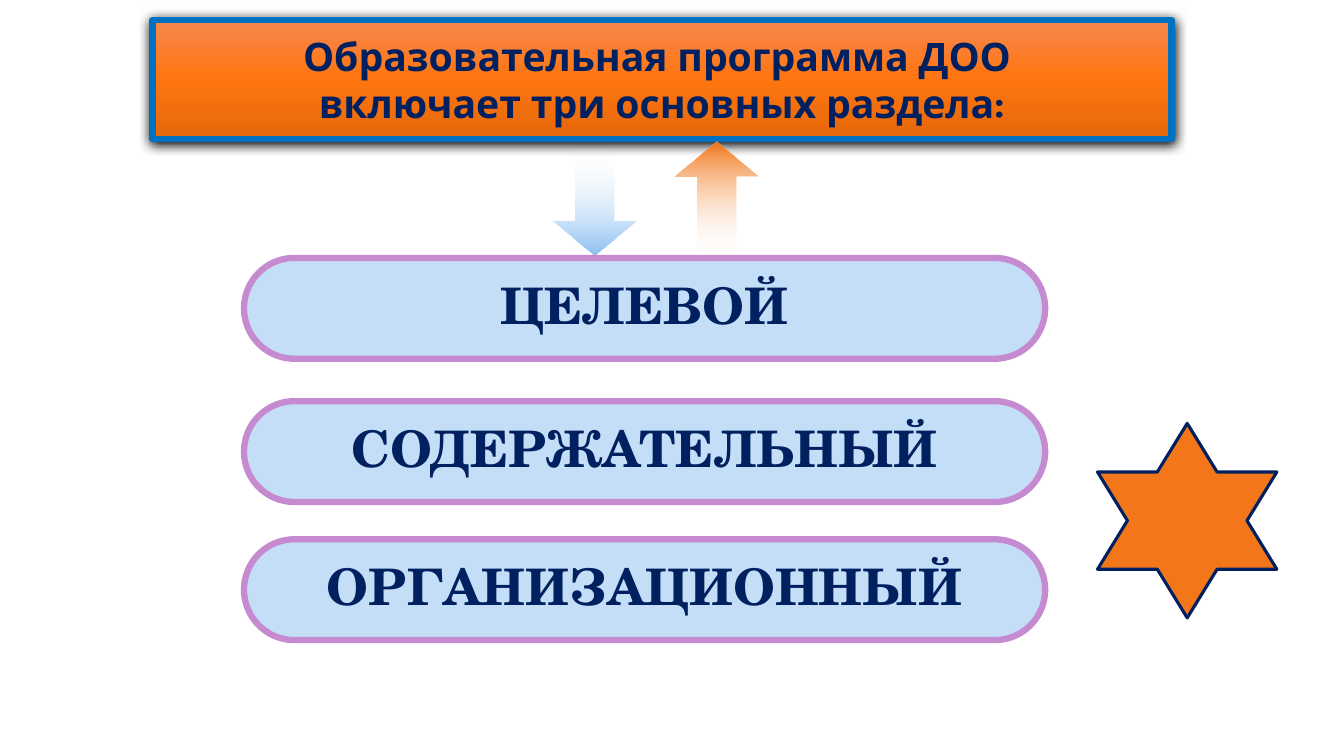
from dataclasses import dataclass
from typing import Optional

from lxml.etree import SubElement
from pptx import Presentation
from pptx.dml.color import RGBColor
from pptx.enum.shapes import MSO_SHAPE
from pptx.enum.text import MSO_ANCHOR, MSO_AUTO_SIZE, PP_ALIGN
from pptx.oxml.ns import qn
from pptx.util import Cm, Pt


@dataclass(frozen=True)
class Theme:
    navy: str = "002060"
    frame: str = "0070C0"
    orange: str = "F3771A"
    sky: str = "8BBEF1"
    lilac: str = "C68AD0"
    white: str = "FFFFFF"
    black: str = "000000"
    head_font: str = "Karla"
    pill_font: str = "TeX Gyre Schola"
    head_size: int = 28
    pill_size: int = 36


@dataclass(frozen=True)
class Box:
    left: float
    top: float
    width: float
    height: float


@dataclass(frozen=True)
class Stop:
    place: int
    color: str
    alpha: Optional[int] = None


@dataclass(frozen=True)
class Arrow:
    kind: MSO_SHAPE
    box: Box
    stops: tuple[Stop, ...]
    angle: int


@dataclass(frozen=True)
class Pill:
    text: str
    top: float


THEME = Theme()
HEAD = Box(3.84, 0.51, 25.68, 3)
STAR = Box(27.66, 10.67, 4.52, 4.9)
HEAD_STOPS = (Stop(0, "F7874E"), Stop(50, "FE750F"), Stop(100, "E5680A"))
DOWN = 270
UP = 90
CLEAR = Stop(0, THEME.white, 0)
ARROWS = (
    Arrow(MSO_SHAPE.DOWN_ARROW, Box(13.92, 3.71, 2.11, 2.72),
          (CLEAR, Stop(100, THEME.sky)), DOWN),
    Arrow(MSO_SHAPE.UP_ARROW, Box(17, 3.57, 2.11, 3),
          (CLEAR, Stop(100, THEME.orange)), UP),
)
PILLS = (
    Pill("ЦЕЛЕВОЙ", 6.5),
    Pill("СОДЕРЖАТЕЛЬНЫЙ", 10.11),
    Pill("ОРГАНИЗАЦИОННЫЙ", 13.59),
)


def place(shape, box: Box) -> None:
    shape.left, shape.top = Cm(box.left), Cm(box.top)
    shape.width, shape.height = Cm(box.width), Cm(box.height)


def add(slide, kind: MSO_SHAPE, box: Box):
    shape = slide.shapes.add_shape(kind, 0, 0, 0, 0)
    place(shape, box)
    shape.shadow.inherit = False
    return shape


def outline(shape, color: str, width: float) -> None:
    shape.line.color.rgb = RGBColor.from_string(color)
    shape.line.width = Pt(width)


def solid(shape, color: str) -> None:
    shape.fill.solid()
    shape.fill.fore_color.rgb = RGBColor.from_string(color)


def fade(color, alpha: int) -> None:
    SubElement(color, qn("a:alpha"), val=str(alpha * 1000))


def blend(shape, stops: tuple[Stop, ...], angle: int) -> None:
    shape.fill.gradient()
    shape.fill.gradient_angle = angle
    group = shape._element.spPr.find(qn("a:gradFill")).find(qn("a:gsLst"))
    for old in list(group):
        group.remove(old)
    for stop in stops:
        node = SubElement(group, qn("a:gs"), pos=str(stop.place * 1000))
        color = SubElement(node, qn("a:srgbClr"), val=stop.color)
        if stop.alpha is not None:
            fade(color, stop.alpha)


def shade(shape) -> None:
    shape.shadow.inherit = False
    effects = shape._element.spPr.find(qn("a:effectLst"))
    cast = SubElement(effects, qn("a:outerShdw"), blurRad=str(Pt(8.5)),
                      dist=str(Pt(1)), dir="5400000", rotWithShape="0")
    SubElement(cast, qn("a:srgbClr"), val=THEME.black)


def write(shape, text: str, font: str, size: int, wrap: bool,
          spacing: float) -> None:
    frame = shape.text_frame
    frame.text = text
    frame.word_wrap = wrap
    frame.auto_size = MSO_AUTO_SIZE.NONE
    frame.vertical_anchor = MSO_ANCHOR.MIDDLE
    para = frame.paragraphs[0]
    para.alignment = PP_ALIGN.CENTER
    para.line_spacing = spacing
    para.font.name = font
    para.font.size = Pt(size)
    para.font.bold = True
    para.font.color.rgb = RGBColor.from_string(THEME.navy)


def draw_head(slide) -> None:
    head = slide.shapes.title
    place(head, HEAD)
    blend(head, HEAD_STOPS, DOWN)
    outline(head, THEME.frame, 4.5)
    shade(head)
    write(head, "Образовательная программа ДОО \vвключает три основных раздела:",
          THEME.head_font, THEME.head_size, True, 1.0)


def draw_star(slide) -> None:
    star = add(slide, MSO_SHAPE.STAR_6_POINT, STAR)
    solid(star, THEME.orange)
    outline(star, THEME.navy, 2.25)


def draw_arrow(slide, arrow: Arrow) -> None:
    shape = add(slide, arrow.kind, arrow.box)
    shape.adjustments[0] = 0.465
    shape.adjustments[1] = 0.421
    blend(shape, arrow.stops, arrow.angle)
    shape.line.fill.background()


def draw_pill(slide, pill: Pill) -> None:
    shape = add(slide, MSO_SHAPE.ROUNDED_RECTANGLE,
                Box(6.15, pill.top, 20.19, 2.54))
    shape.adjustments[0] = 0.5
    solid(shape, THEME.sky)
    fade(shape._element.spPr.find(qn("a:solidFill"))[0], 50)
    outline(shape, THEME.lilac, 4.5)
    write(shape, pill.text, THEME.pill_font, THEME.pill_size, False, 0.9)


def main() -> None:
    deck = Presentation()
    deck.slide_width, deck.slide_height = Cm(33.87), Cm(19.05)
    slide = deck.slides.add_slide(deck.slide_layouts[5])
    draw_head(slide)
    draw_star(slide)
    for arrow in ARROWS:
        draw_arrow(slide, arrow)
    for pill in PILLS:
        draw_pill(slide, pill)
    deck.save("out.pptx")


if __name__ == "__main__":
    main()
